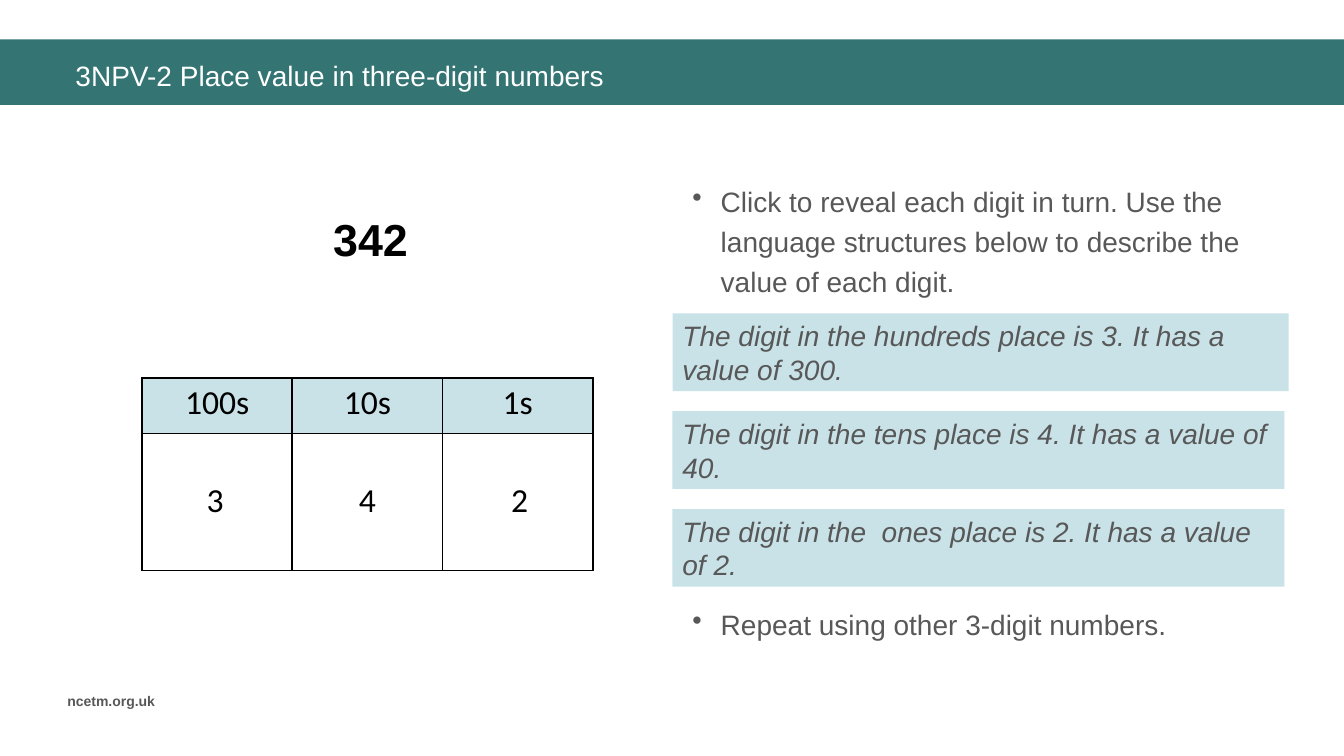
from lxml.etree import SubElement
from pptx import Presentation
from pptx.dml.color import RGBColor
from pptx.enum.shapes import MSO_SHAPE as Shape
from pptx.enum.text import MSO_ANCHOR as Anchor, PP_ALIGN as Align
from pptx.oxml.ns import qn
from pptx.util import Inches, Pt

TITLE = "3NPV-2 Place value in three-digit numbers"
NUMBER = "342"
PLACES = ["100s", "10s", "1s"]
SENTENCES = [
    ("The digit in the hundreds place is 3. It has a value of 300.", 6.11),
    ("The digit in the tens place is 4. It has a value of 40.", 6.07),
    ("The digit in the  ones place is 2. It has a value of 2.", 6.07),
]
INSTRUCTIONS = [
    ("Click to reveal each digit in turn. Use the language structures below "
     "to describe the value of each digit.", 1.71, 1.35),
    ("Repeat using other 3-digit numbers.", 5.91, 0.6),
]
FOOTER = "ncetm.org.uk"

TEAL = RGBColor(0x34, 0x75, 0x74)
PALE_BLUE = RGBColor(0xC8, 0xE2, 0xE8)
GREY = RGBColor(0x58, 0x58, 0x58)
BLACK = RGBColor(0, 0, 0)
WHITE = RGBColor(0xFF, 0xFF, 0xFF)

TABLE_LEFT, TABLE_TOP = 1.41, 3.75
COLUMN_WIDTH, ROW_HEIGHTS = 1.49, (0.55, 1.36)
DIGIT_LEFT, DIGIT_STEP = 1.85, 1.51
SENTENCE_LEFT, SENTENCE_TOP, SENTENCE_STEP = 6.67, 3.11, 0.97


def write(frame, text, size, color, font="Arial", align=Align.LEFT,
          bold=False, italic=False):
    frame.word_wrap = True
    paragraph = frame.paragraphs[0]
    paragraph.text = text
    paragraph.alignment = align
    style = paragraph.font
    style.name, style.size = font, Pt(size)
    style.bold, style.italic = bold, italic
    style.color.rgb = color
    return paragraph


def add_text(slide, box, text, size, color, anchor=Anchor.TOP, **style):
    frame = slide.shapes.add_textbox(*map(Inches, box)).text_frame
    frame.vertical_anchor = anchor
    return write(frame, text, size, color, **style)


def add_band(slide, box, color):
    band = slide.shapes.add_shape(Shape.RECTANGLE, *map(Inches, box))
    band.shadow.inherit = False
    band.fill.solid()
    band.fill.fore_color.rgb = color
    band.line.fill.background()
    return band


def add_instruction(slide, text, top, height):
    paragraph = add_text(slide, (6.77, top, 5.9, height), text, 20, GREY)
    paragraph.line_spacing = 1.2
    properties = paragraph._p.get_or_add_pPr()
    properties.set("marL", str(Inches(0.28)))
    properties.set("indent", str(Inches(-0.28)))
    bullet = properties.makeelement(qn("a:buChar"), {"char": "•"})
    properties.find(qn("a:defRPr")).addprevious(bullet)


def border_cell(cell):
    """Draw all four edges, placed ahead of the cell's fill."""
    properties = cell._tc.get_or_add_tcPr()
    for position, edge in enumerate(("lnL", "lnR", "lnT", "lnB")):
        line = properties.makeelement(qn(f"a:{edge}"), {"w": str(Pt(1.5))})
        fill = SubElement(line, qn("a:solidFill"))
        SubElement(fill, qn("a:srgbClr"), val=str(BLACK))
        properties.insert(position, line)


def add_place_value_table(slide):
    table = slide.shapes.add_table(
        len(ROW_HEIGHTS), len(PLACES), Inches(TABLE_LEFT), Inches(TABLE_TOP),
        Inches(COLUMN_WIDTH * len(PLACES)), Inches(sum(ROW_HEIGHTS))).table
    for row, height in zip(table.rows, ROW_HEIGHTS):
        row.height = Inches(height)
    for index, (place, digit) in enumerate(zip(PLACES, NUMBER)):
        table.columns[index].width = Inches(COLUMN_WIDTH)
        for row, color in enumerate((PALE_BLUE, WHITE)):
            cell = table.cell(row, index)
            cell.fill.solid()
            cell.fill.fore_color.rgb = color
            border_cell(cell)
        heading = write(table.cell(0, index).text_frame, place, 24, BLACK,
                        font="Calibri", align=Align.CENTER)
        add_text(slide, (DIGIT_LEFT + index * DIGIT_STEP, 4.7, 0.57, 0.5),
                 digit, 24, BLACK, font="Calibri", align=Align.CENTER)


def main():
    deck = Presentation()
    deck.slide_width, deck.slide_height = Inches(13.33), Inches(7.5)
    slide = deck.slides.add_slide(deck.slide_layouts[6])

    add_band(slide, (0, 0.39, 13.33, 0.65), TEAL)
    add_text(slide, (0.57, 6.82, 1.21, 0.27), FOOTER, 10, GREY, bold=True)
    add_text(slide, (0.65, 0.51, 12.32, 0.47), TITLE, 20, WHITE,
             anchor=Anchor.MIDDLE)
    add_text(slide, (2.08, 2.05, 3.19, 0.64), NUMBER, 32, BLACK,
             align=Align.CENTER, bold=True)
    add_place_value_table(slide)
    for text, top, height in INSTRUCTIONS:
        add_instruction(slide, text, top, height)
    for index, (sentence, width) in enumerate(SENTENCES):
        top = SENTENCE_TOP + index * SENTENCE_STEP
        band = add_band(slide, (SENTENCE_LEFT, top, width, 0.77), PALE_BLUE)
        write(band.text_frame, sentence, 20, GREY, italic=True)

    deck.save("out.pptx")


if __name__ == "__main__":
    main()
